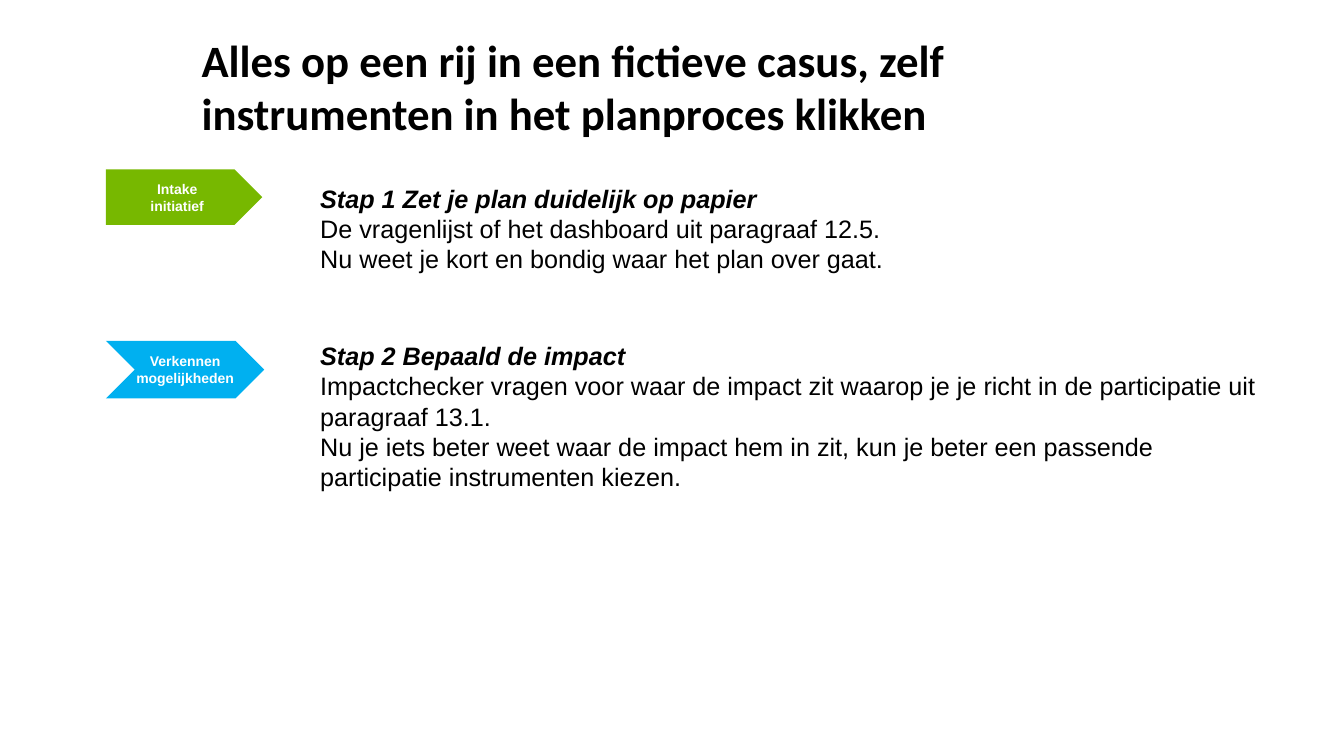
from pptx import Presentation
from pptx import util as u
from pptx.dml import color
from pptx.enum import shapes, text


def rgb(value):
    return color.RGBColor.from_string(value)


def add_line(paragraph, wording, font, size, colour, bold=False, italic=False):
    run = paragraph.add_run()
    run.text = wording
    run.font.name = font
    run.font.size = u.Pt(size)
    run.font.bold = bold
    run.font.italic = italic
    run.font.color.rgb = rgb(colour)


presentation = Presentation()
presentation.slide_width = u.Cm(33.87)
presentation.slide_height = u.Cm(19.05)
slide = presentation.slides.add_slide(presentation.slide_layouts[6])

title = slide.shapes.add_textbox(u.Cm(4.83), u.Cm(0.69), u.Cm(24.21), u.Cm(3))
title.text_frame.word_wrap = True
add_line(title.text_frame.paragraphs[0],
         "Alles op een rij in een fictieve casus, zelf instrumenten in het planproces klikken",
         "Calibri", 32, "000000", bold=True)

phases = [
    (shapes.MSO_SHAPE.PENTAGON, 4.27, 3.94, 1.4, "77B800", 0.33,
     ["Intake", "initiatief"]),
    (shapes.MSO_SHAPE.CHEVRON, 8.59, 3.99, 1.45, "00B0F0", 0,
     ["Verkennen mogelijkheden"]),
]
for preset, top, width, height, fill, inset, lines in phases:
    arrow = slide.shapes.add_shape(preset, u.Cm(2.67), u.Cm(top), u.Cm(width), u.Cm(height))
    arrow.shadow.inherit = False
    arrow.adjustments[0] = 0.5
    arrow.fill.solid()
    arrow.fill.fore_color.rgb = rgb(fill)
    arrow.line.fill.background()
    frame = arrow.text_frame
    frame.word_wrap = True
    frame.vertical_anchor = text.MSO_ANCHOR.MIDDLE
    frame.margin_left = frame.margin_right = u.Cm(inset)
    frame.margin_top = frame.margin_bottom = u.Cm(0.18)
    for index, line in enumerate(lines):
        paragraph = frame.add_paragraph() if index else frame.paragraphs[0]
        paragraph.alignment = text.PP_ALIGN.CENTER
        add_line(paragraph, line, "Arial", 10, "FFFFFF", bold=True)

steps = [
    (4.47, 23.39, 2.57, [
        "Stap 1 Zet je plan duidelijk op papier",
        "De vragenlijst of het dashboard uit paragraaf 12.5.",
        "Nu weet je kort en bondig waar het plan over gaat.",
    ]),
    (8.43, 24.74, 4.11, [
        "Stap 2 Bepaald de impact",
        "Impactchecker vragen voor waar de impact zit waarop je je richt in de participatie uit paragraaf 13.1.",
        "Nu je iets beter weet waar de impact hem in zit, kun je beter een passende participatie instrumenten kiezen.",
    ]),
]
for top, width, height, lines in steps:
    step = slide.shapes.add_textbox(u.Cm(7.82), u.Cm(top), u.Cm(width), u.Cm(height))
    frame = step.text_frame
    frame.word_wrap = True
    frame.vertical_anchor = text.MSO_ANCHOR.MIDDLE
    for index, line in enumerate(lines):
        paragraph = frame.add_paragraph() if index else frame.paragraphs[0]
        heading = index == 0
        add_line(paragraph, line, "Arial", 18, "000000", bold=heading, italic=heading)

presentation.save("out.pptx")
